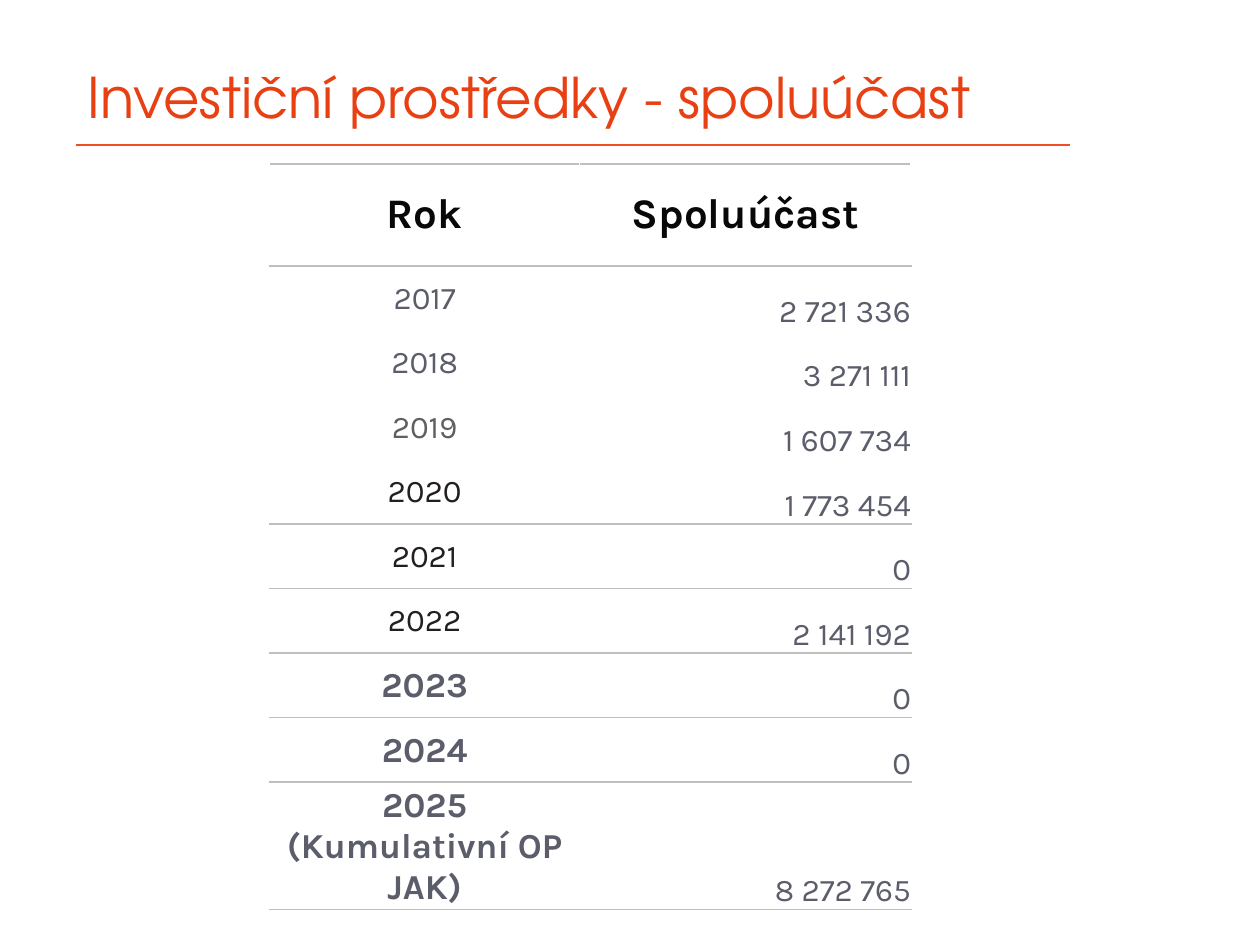
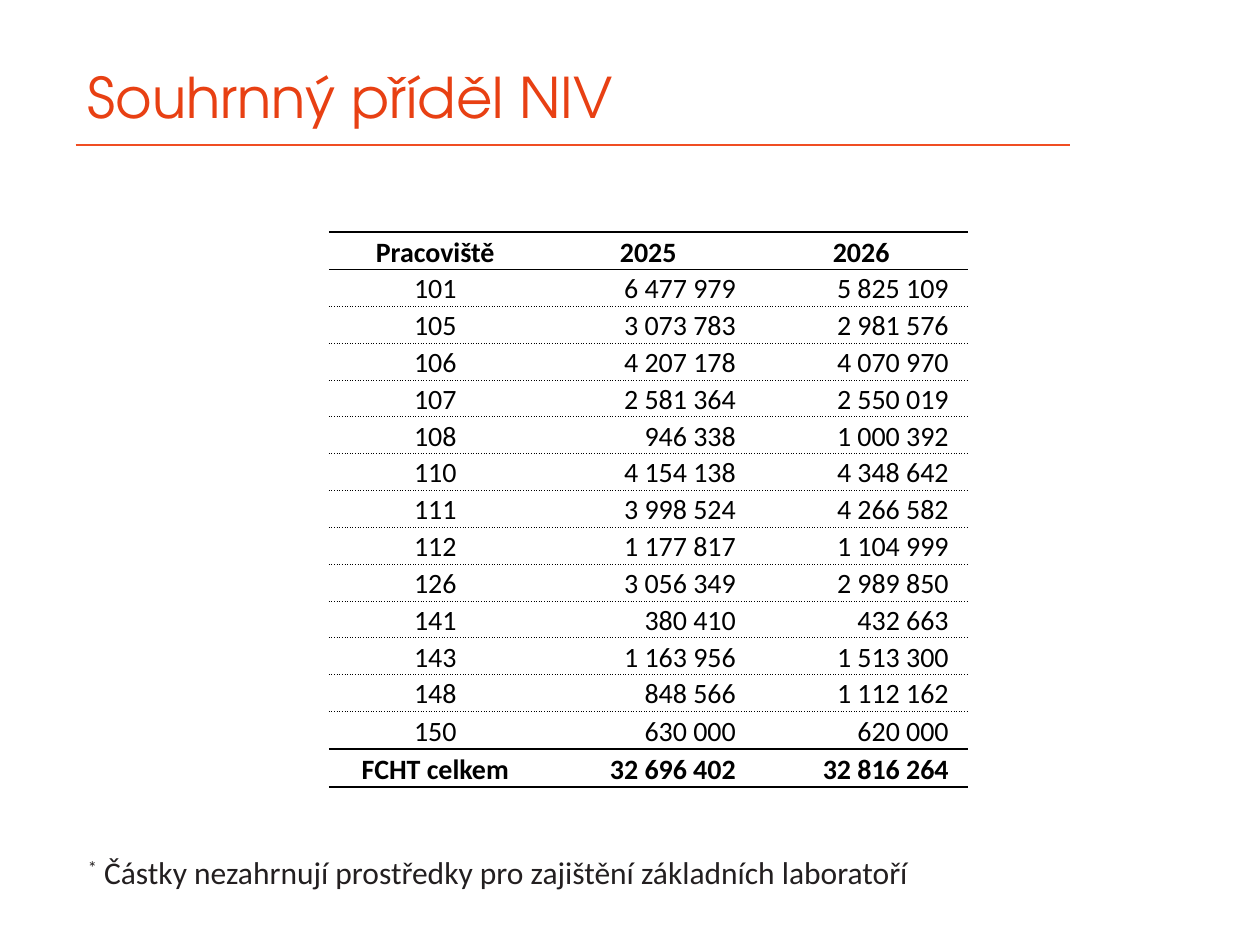
from lxml.etree import SubElement
from pptx import Presentation
from pptx.dml.color import RGBColor
from pptx.enum.shapes import MSO_CONNECTOR
from pptx.enum.text import MSO_ANCHOR as Anchor, MSO_AUTO_SIZE, PP_ALIGN as Align
from pptx.oxml.ns import qn
from pptx.util import Inches, Pt

COLORS = {"title": "E84013", "rule": "F04E23", "text": "231F20", "head": "080808",
          "muted": "5B5D6B", "grey": "606060", "border": "BFBFBF",
          "white": "FFFFFF", "black": "000000"}
NO_STYLE = "{2D5ABB26-0587-4C30-8999-92F81FD0307C}"


def add_run(paragraph, text, font_name, size, color, bold=False):
    run = paragraph.add_run()
    run.text = text
    run.font.name = font_name
    run.font.size = Pt(size)
    run.font.bold = bold
    run.font.color.rgb = RGBColor.from_string(COLORS[color])
    return run


def add_ruled_table(slide, left, top, widths, heights, rules, side_rule=None):
    """Rules holds one (colour, points, dash) above each row and one below the last."""
    table = slide.shapes.add_table(
        len(heights), len(widths), Inches(left), Inches(top),
        Inches(sum(widths)), Inches(sum(heights))).table
    table.first_row = table.horz_banding = False
    table._tbl.tblPr.find(qn("a:tableStyleId")).text = NO_STYLE
    for column, width in zip(table.columns, widths):
        column.width = Inches(width)
    for index, (row, height) in enumerate(zip(table.rows, heights)):
        row.height = Inches(height)
        borders = {"lnL": side_rule, "lnR": side_rule,
                   "lnT": rules[index], "lnB": rules[index + 1]}
        for cell in row.cells:
            cell.margin_left = cell.margin_right = 0
            cell.margin_top = cell.margin_bottom = 0
            cell.vertical_anchor = Anchor.BOTTOM
            for tag, rule in borders.items():
                if rule:
                    color, points, dash = rule
                    line = SubElement(cell._tc.get_or_add_tcPr(), qn("a:" + tag),
                                      w=str(Pt(points)))
                    fill = SubElement(line, qn("a:solidFill"))
                    SubElement(fill, qn("a:srgbClr"), val=COLORS[color])
                    SubElement(line, qn("a:prstDash"), val=dash)
            cell.fill.background()
    return table


presentation = Presentation()
presentation.slide_width, presentation.slide_height = Inches(10), Inches(7.5)

# Shared title and rule
slides = []
for title in ("Investiční prostředky - spoluúčast", "Souhrnný příděl NIV"):
    slide = presentation.slides.add_slide(presentation.slide_layouts[6])
    slides.append(slide)
    title_rule = slide.shapes.add_connector(
        MSO_CONNECTOR.STRAIGHT, Inches(0.6), Inches(1.15), Inches(8.49), Inches(1.15))
    title_rule.line.color.rgb = RGBColor.from_string(COLORS["rule"])
    title_rule.line.width = Pt(1)
    SubElement(title_rule._element.spPr, qn("a:effectLst"))
    frame = slide.shapes.add_textbox(Inches(0.6), Inches(0.52), Inches(8), Inches(0.55)).text_frame
    frame.word_wrap = True
    frame.vertical_anchor = Anchor.MIDDLE
    frame.paragraphs[0].line_spacing = 0.9
    add_run(frame.paragraphs[0], title, "TeX Gyre Adventor", 32, "title")
investment_slide, allocation_slide = slides

# Slide 1: co-financing by year
contributions = [
    ("2017", "2 721 336", "muted"), ("2018", "3 271 111", "muted"),
    ("2019", "1 607 734", "grey"), ("2020", "1 773 454", "text"),
    ("2021", "0", "text"), ("2022", "2 141 192", "text"),
    ("2023", "0", "muted"), ("2024", "0", "muted"),
    ("2025 (Kumulativní OP JAK)", "8 272 765", "muted"),
]
grey_rule, white_rule = ("border", 1, "solid"), ("white", 1, "solid")
rules = [("border", 1.5, "solid"), grey_rule] + [white_rule] * 3 + [grey_rule] * 6
table = add_ruled_table(investment_slide, 2.14, 1.3, [2.46, 2.63],
                        [0.81] + [4.1 / 8] * 9, rules, white_rule)
for column, heading in enumerate(("Rok", "Spoluúčast")):
    cell = table.cell(0, column)
    cell.vertical_anchor = Anchor.MIDDLE
    cell.text_frame.paragraphs[0].alignment = Align.CENTER
    add_run(cell.text_frame.paragraphs[0], heading, "Karla", 24, "head", True)
for row, (year, amount, year_color) in enumerate(contributions, start=1):
    year_cell, amount_cell = table.cell(row, 0), table.cell(row, 1)
    year_cell.vertical_anchor = Anchor.MIDDLE
    year_cell.margin_left = year_cell.margin_right = year_cell.margin_top = Inches(0.01)
    recent = row > 6
    paragraph = year_cell.text_frame.paragraphs[0]
    paragraph.alignment = Align.CENTER
    add_run(paragraph, year, "Karla", 20 if recent else 18, year_color, recent)
    paragraph = amount_cell.text_frame.paragraphs[0]
    paragraph.alignment = Align.RIGHT
    add_run(paragraph, amount, "Karla", 18, "muted")

# Slide 2: footnote
footnote = allocation_slide.shapes.add_textbox(
    Inches(0.6), Inches(6.72), Inches(6.74), Inches(0.4)).text_frame
footnote.word_wrap = False
footnote.auto_size = MSO_AUTO_SIZE.SHAPE_TO_FIT_TEXT
paragraph = footnote.paragraphs[0]
asterisk = add_run(paragraph, "*", "Calibri", 18, "text")
asterisk._r.get_or_add_rPr().set("baseline", "30000")
add_run(paragraph, " Částky nezahrnují prostředky pro zajištění základních laboratoří",
        "Calibri", 18, "text")

# Slide 2: allocation by department
allocations = [
    ("Pracoviště", "2025", "2026"),
    ("101", "6 477 979", "5 825 109"),
    ("105", "3 073 783", "2 981 576"),
    ("106", "4 207 178", "4 070 970"),
    ("107", "2 581 364", "2 550 019"),
    ("108", "946 338", "1 000 392"),
    ("110", "4 154 138", "4 348 642"),
    ("111", "3 998 524", "4 266 582"),
    ("112", "1 177 817", "1 104 999"),
    ("126", "3 056 349", "2 989 850"),
    ("141", "380 410", "432 663"),
    ("143", "1 163 956", "1 513 300"),
    ("148", "848 566", "1 112 162"),
    ("150", "630 000", "620 000"),
    ("FCHT celkem", "32 696 402", "32 816 264"),
]
black_rule, dotted_rule = ("black", 1, "solid"), ("black", 0.5, "sysDot")
table = add_ruled_table(allocation_slide, 2.61, 1.84, [1.69] * 3,
                        [0.3] + [3.51 / 12] * 12 + [0.3] * 2,
                        [black_rule] * 2 + [dotted_rule] * 12 + [black_rule] * 2)
last_row = len(allocations) - 1
for row, values in enumerate(allocations):
    for column, value in enumerate(values):
        cell = table.cell(row, column)
        paragraph = cell.text_frame.paragraphs[0]
        paragraph.alignment = Align.CENTER
        if row and column:
            paragraph.alignment = Align.RIGHT
            cell.margin_right = Inches(0.15)
        add_run(paragraph, value, "Calibri", 16, "black", row in (0, last_row))

presentation.save("out.pptx")
